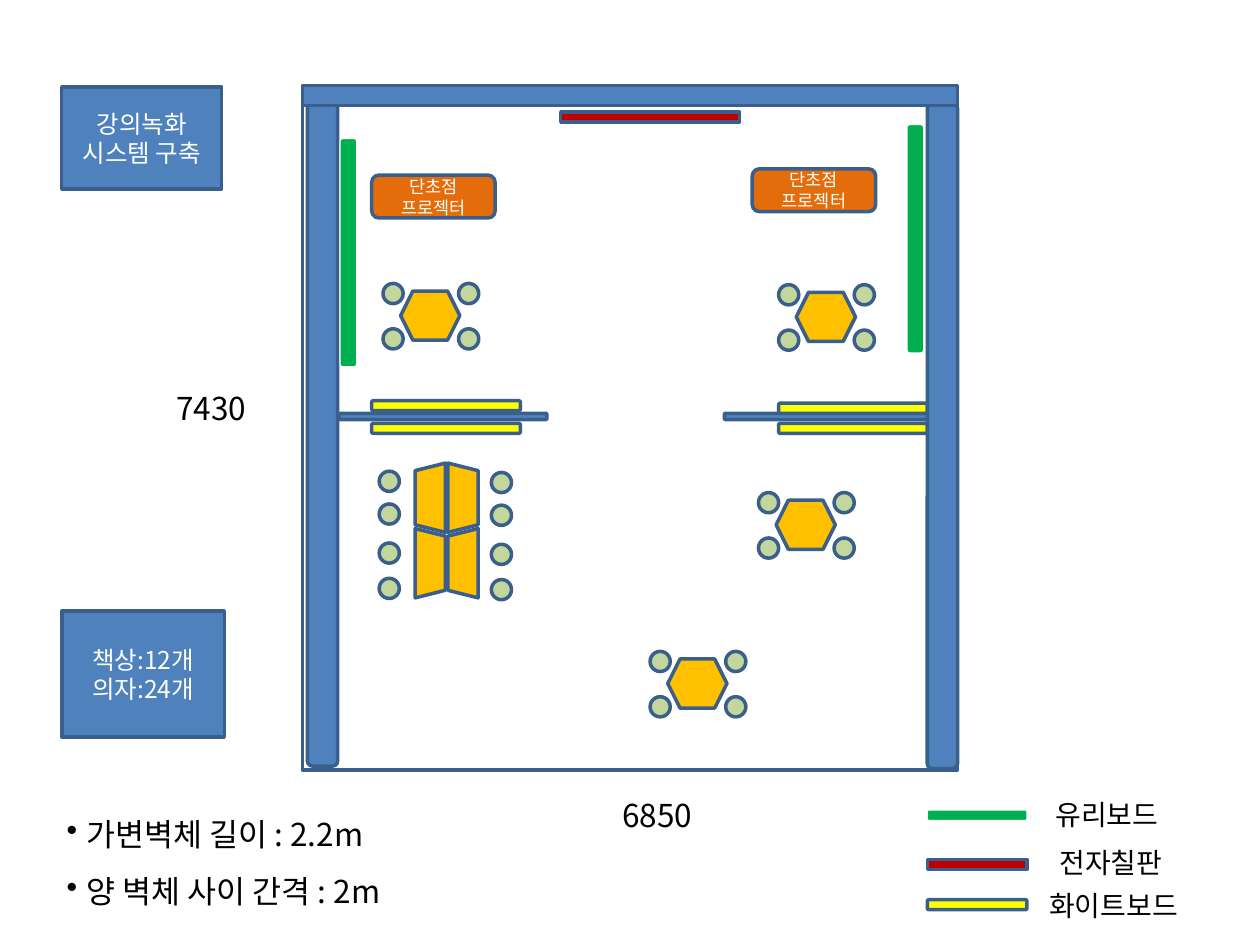
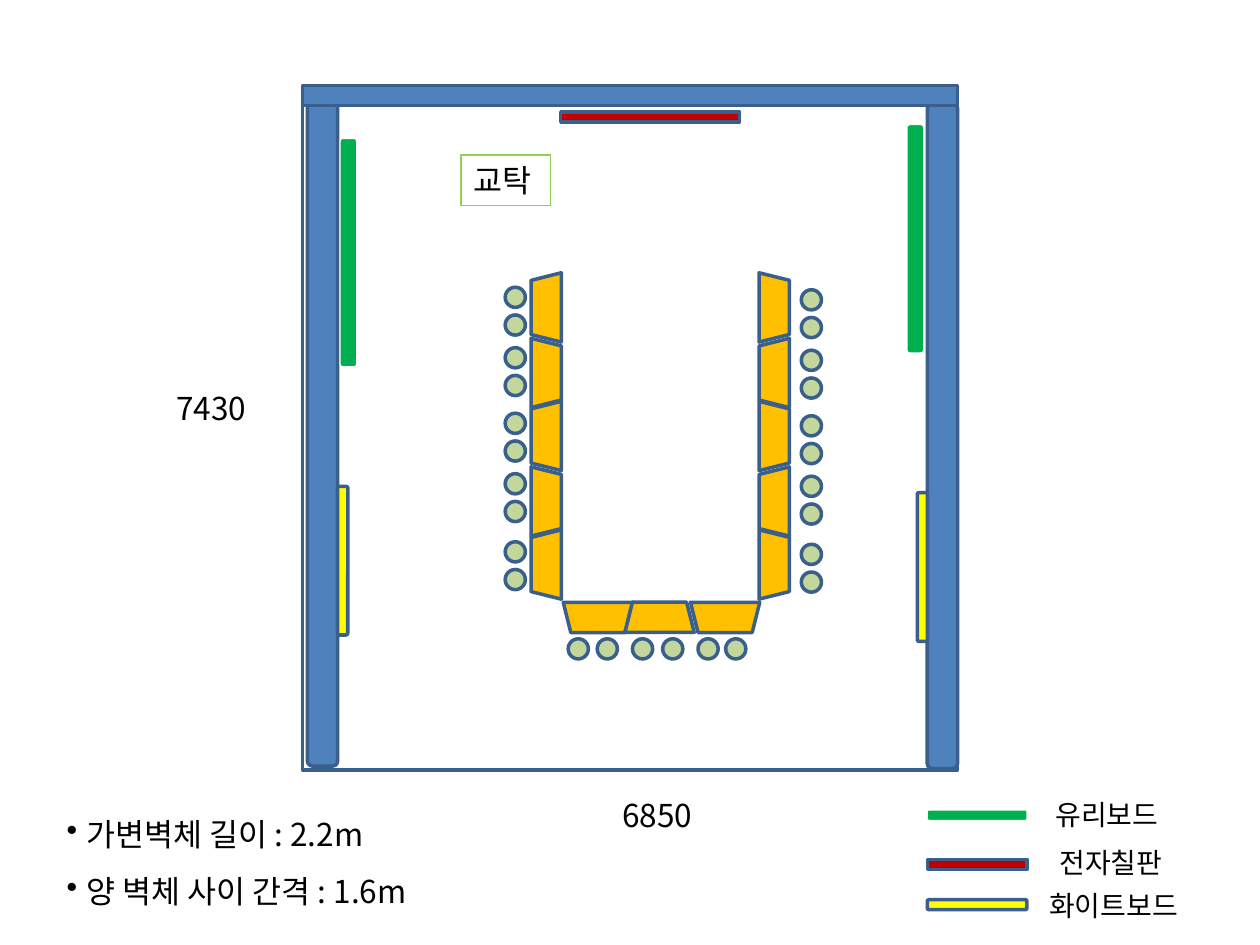
from collections import namedtuple

from pptx import Presentation
from pptx.dml.color import RGBColor
from pptx.enum.shapes import MSO_SHAPE
from pptx.enum.text import MSO_ANCHOR, MSO_AUTO_SIZE, PP_ALIGN
from pptx.oxml.xmlchemy import OxmlElement
from pptx.util import Inches, Pt

RECTANGLE = MSO_SHAPE.RECTANGLE
ROUNDED = MSO_SHAPE.ROUNDED_RECTANGLE
HEXAGON = MSO_SHAPE.HEXAGON
TRAPEZOID = MSO_SHAPE.TRAPEZOID
CIRCLE = MSO_SHAPE.FLOWCHART_CONNECTOR
MIDDLE = MSO_ANCHOR.MIDDLE
CENTER = PP_ALIGN.CENTER
LEFT = PP_ALIGN.LEFT
GROW = MSO_AUTO_SIZE.SHAPE_TO_FIT_TEXT

FONT = "Noto Sans CJK KR"
COLORS = {
    "wall": "4F81BD", "outline": "3A5F8C", "glass": "00B050",
    "screen": "C00000", "whiteboard": "FFFF00", "desk": "FFC000",
    "chair": "C3D69B", "projector": "E46C0A", "lectern": "92D050",
    "light": "FFFFFF", "dark": "000000",
}
CHAIR = 0.16
DESK_LENGTH, DESK_DEPTH = 0.55, 0.24
BOARD_LENGTH, BOARD_DEPTH = 1.18, 0.08

Box = namedtuple("Box", "left top width height")
ROOM = Box(2.4, 0.68, 5.2, 5.43)
LEGEND = Box(7.36, 6.25, 2.19, 1.12)
NOTES = Box(0.43, 6.27, 3.01, 1.01)


def color(name):
    return RGBColor.from_string(COLORS[name])


def inside(box, left, top, width, height):
    """Box given by offsets from the corner of another box."""
    return Box(box.left + left, box.top + top, width, height)


def add_part(shapes, kind, box, fill, line="outline", line_width=2, angle=0):
    part = shapes.add_shape(kind, *[Inches(length) for length in box])
    part.shadow.inherit = False
    if fill:
        part.fill.solid()
        part.fill.fore_color.rgb = color(fill)
    else:
        part.fill.background()
    part.line.color.rgb = color(line)
    part.line.width = Pt(line_width)
    part.rotation = angle
    return part


def add_glass(shapes, box):
    add_part(shapes, ROUNDED, box, "glass", "light", 0.5)


def write(frame, lines, size, tone="dark", align=LEFT, bullet=False):
    for index, line in enumerate(lines):
        para = frame.paragraphs[0] if index == 0 else frame.add_paragraph()
        para.add_run().text = line
        para.alignment = align
        if bullet:
            properties = para._p.get_or_add_pPr()
            properties.set("marL", str(Inches(0.16)))
            properties.set("indent", str(-Inches(0.16)))
            mark = OxmlElement("a:buChar")
            mark.set("char", "•")
            properties.append(mark)
            para.line_spacing = 1.5
        para.font.size = Pt(size)
        para.font.color.rgb = color(tone)
        para.font.name = FONT
        east_asian = OxmlElement("a:ea")
        east_asian.set("typeface", FONT)
        para.font._element.append(east_asian)


def add_label(page, box, lines, size=18, bullet=False):
    label = page.shapes.add_textbox(*[Inches(length) for length in box])
    label.text_frame.word_wrap = False
    label.text_frame.auto_size = GROW
    write(label.text_frame, lines, size, bullet=bullet)
    return label


def add_captioned_part(page, kind, box, fill, lines, size):
    part = add_part(page.shapes, kind, box, fill)
    part.text_frame.word_wrap = True
    part.text_frame.vertical_anchor = MIDDLE
    write(part.text_frame, lines, size, "light", CENTER)


def add_chair(shapes, left, top):
    add_part(shapes, CIRCLE, Box(left, top, CHAIR, CHAIR), "chair")


def add_desk(page, left, top, angle):
    box = Box(left, top, DESK_LENGTH, DESK_DEPTH)
    add_part(page.shapes, TRAPEZOID, box, "desk", angle=angle)


def draw_room(page, box):
    # Outline, side walls and front wall
    shapes = page.shapes
    add_part(shapes, RECTANGLE, box, None)
    add_part(shapes, ROUNDED, inside(box, 0.04, 0.12, 0.24, 5.28), "wall")
    add_part(shapes, ROUNDED, inside(box, 4.96, 0.14, 0.24, 5.28), "wall")
    add_part(shapes, RECTANGLE, inside(box, 0, 0, box.width, 0.16), "wall")
    # Electronic board and glass boards
    add_part(shapes, RECTANGLE, inside(box, 2.05, 0.21, 1.42, 0.08), "screen")
    add_glass(shapes, inside(box, 0.3, 0.42, 0.13, 1.81))
    add_glass(shapes, inside(box, 4.8, 0.31, 0.13, 1.81))
    # Dimensions
    add_label(page, inside(box, -1.1, 2.36, 0.76, 0.4), ["7430"])
    add_label(page, inside(box, 2.44, 5.59, 0.76, 0.4), ["6850"])


def draw_legend(page, box):
    shapes = page.shapes
    add_glass(shapes, inside(box, 0, 0.18, 0.79, 0.08))
    add_part(shapes, RECTANGLE, inside(box, 0, 0.57, 0.79, 0.08), "screen")
    add_part(shapes, ROUNDED, inside(box, 0, 0.89, 0.79, 0.08), "whiteboard")
    add_label(page, inside(box, 0.92, 0.03, 1.1, 0.37), ["유리보드"], 16)
    add_label(page, inside(box, 0.95, 0.41, 1.1, 0.37), ["전자칠판"], 16)
    add_label(page, inside(box, 0.87, 0.75, 1.32, 0.37), ["화이트보드"], 16)


def draw_shared(page, gap):
    draw_room(page, ROOM)
    draw_legend(page, LEGEND)
    notes = ["가변벽체 길이 : 2.2m", f"양 벽체 사이 간격 : {gap}"]
    add_label(page, NOTES, notes, bullet=True)


def draw_partitions(page, box):
    # Movable walls with a whiteboard on each face
    for wall_left, board_left, board_top in ((0.29, 0.55, 2.5),
                                             (3.35, 3.78, 2.52)):
        wall = inside(box, wall_left, 2.6, 1.65, 0.05)
        add_part(page.shapes, ROUNDED, wall, "wall")
        for top in (board_top, 2.68):
            board = inside(box, board_left, top, BOARD_LENGTH, BOARD_DEPTH)
            add_part(page.shapes, ROUNDED, board, "whiteboard")


def draw_hexagon_table(page, left, top):
    group = page.shapes.add_group_shape()
    table = Box(left + 0.14, top + 0.06, 0.47, 0.39)
    add_part(group.shapes, HEXAGON, table, "desk")
    for across in (0, 0.6):
        for down in (0, 0.36):
            add_chair(group.shapes, left + across, top + down)


def draw_long_table(page, left, top):
    # Four desks back to back
    for across, angles in ((0.13, (270, 90)), (0.39, (90, 270))):
        for row, angle in enumerate(angles):
            add_desk(page, left + across, top + 0.09 + 0.52 * row, angle)
    # Chairs along both sides
    for down in (0, 0.26, 0.57, 0.85):
        add_chair(page.shapes, left, top + down)
        add_chair(page.shapes, left + 0.89, top + down + 0.01)


def draw_u_table(page, left, top):
    # Two mirrored sides of five desks
    for row in range(5):
        desk_top = top + 0.04 + 0.51 * row + 0.01 * (row % 2)
        angle = 90 if row % 2 else 270
        add_desk(page, left + 0.05, desk_top, angle)
        add_desk(page, left + 1.86, desk_top, 360 - angle)
    # Closing row of three desks
    for across, angle in ((0.46, 180), (0.95, 0), (1.47, 180)):
        add_desk(page, left + across, top + 2.5, angle)
    # Chairs in pairs around the outside
    for pair in (0, 0.48, 1, 1.48, 2.02):
        for down in (pair, pair + 0.22):
            add_chair(page.shapes, left, top + down)
            add_chair(page.shapes, left + 2.35, top + down + 0.02)
    for across in (0.5, 0.73, 1.01, 1.25, 1.53, 1.75):
        add_chair(page.shapes, left + across, top + 2.79)


def build_group_layout(page):
    draw_partitions(page, ROOM)
    draw_shared(page, "2m")
    for left, top in ((3.04, 2.25), (6.18, 2.26), (5.16, 5.17), (6.02, 3.91)):
        draw_hexagon_table(page, left, top)
    draw_long_table(page, 3.01, 3.74)
    # Projectors
    for left, top in ((0.55, 0.71), (3.57, 0.66)):
        add_captioned_part(page, ROUNDED, inside(ROOM, left, top, 0.98, 0.34),
                           "projector", ["단초점", "프로젝터"], 10)
    # Information panels
    add_captioned_part(page, RECTANGLE, Box(0.49, 0.69, 1.27, 0.81), "wall",
                       ["강의녹화", "시스템 구축"], 14)
    add_captioned_part(page, RECTANGLE, Box(0.49, 4.85, 1.29, 1), "wall",
                       ["책상:12개", "의자:24개"], 14)


def build_seminar_layout(page):
    draw_shared(page, "1.6m")
    # Whiteboards on the side walls
    for left, top in ((-0.27, 3.73), (4.33, 3.78)):
        board = inside(ROOM, left, top, BOARD_LENGTH, BOARD_DEPTH)
        add_part(page.shapes, ROUNDED, board, "whiteboard", angle=90)
    draw_u_table(page, 4.01, 2.28)
    # Lectern
    lectern = add_label(page, inside(ROOM, 1.26, 0.55, 0.71, 0.4), ["교탁"])
    lectern.line.color.rgb = color("lectern")
    lectern.line.width = Pt(0.75)


def main():
    deck = Presentation()
    deck.slide_width, deck.slide_height = Inches(10), Inches(7.5)
    for build in (build_group_layout, build_seminar_layout):
        build(deck.slides.add_slide(deck.slide_layouts[6]))
    deck.save("out.pptx")


if __name__ == "__main__":
    main()
